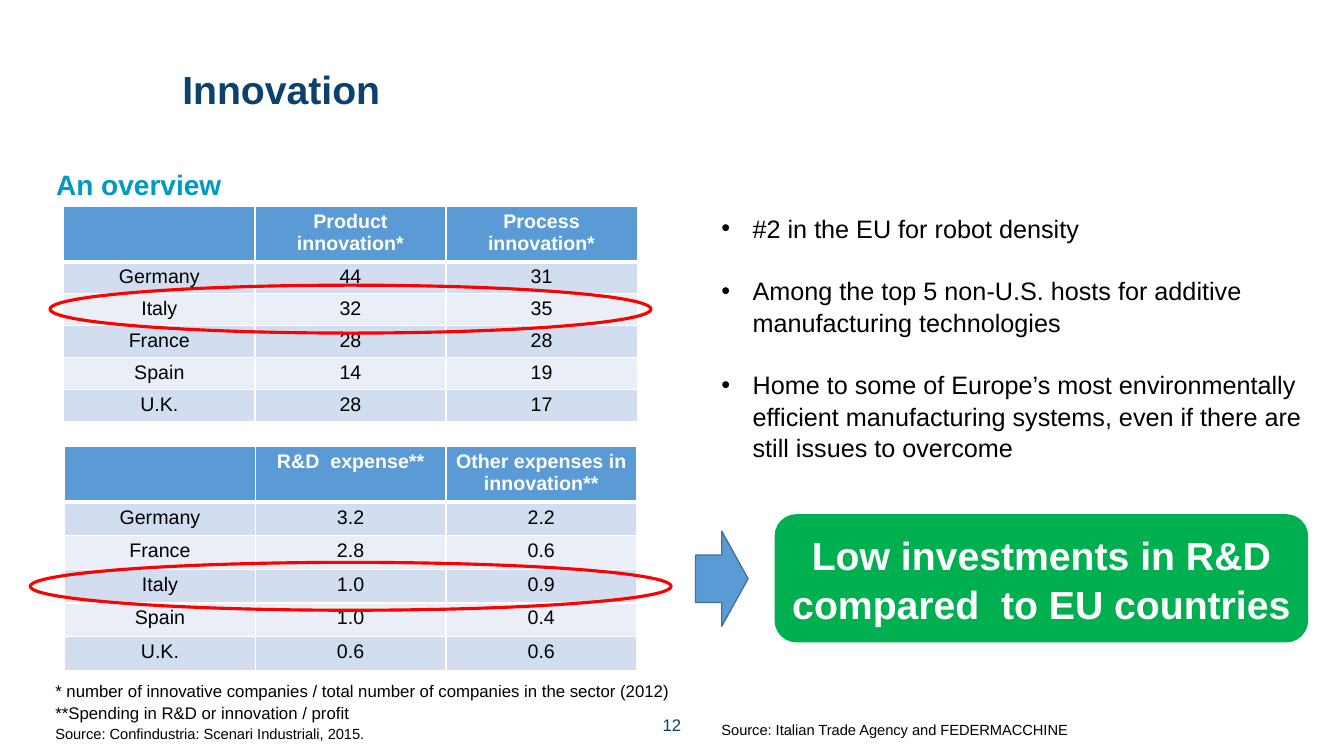
from collections import namedtuple

from lxml.etree import SubElement
from pptx import Presentation
from pptx.dml.color import RGBColor
from pptx.enum.shapes import MSO_SHAPE as Shape
from pptx.enum.text import MSO_ANCHOR as Anchor, PP_ALIGN as Align
from pptx.oxml.ns import qn
from pptx.util import Emu, Inches, Pt

COLORS = {
    "navy": "0C406D", "cyan": "0099C4", "black": "000000", "white": "FFFFFF",
    "blue": "5B9BD5", "outline": "43739E", "band": "D2DEEF", "pale": "EAEFF7",
    "red": "FF0000", "green": "00B050",
}
SLIDE_WIDTH, SLIDE_HEIGHT = Inches(13.33), Inches(7.5)
COLUMN, ROW = SLIDE_WIDTH / 32, SLIDE_HEIGHT / 18
Box = namedtuple("Box", "left top width height")

INNOVATION = [
    ("", "Product innovation*", "Process innovation*"),
    ("Germany", "44", "31"),
    ("Italy", "32", "35"),
    ("France", "28", "28"),
    ("Spain", "14", "19"),
    ("U.K.", "28", "17"),
]
EXPENSES = [
    ("", "R&D  expense**", "Other expenses in innovation**"),
    ("Germany", "3.2", "2.2"),
    ("France", "2.8", "0.6"),
    ("Italy", "1.0", "0.9"),
    ("Spain", "1.0", "0.4"),
    ("U.K.", "0.6", "0.6"),
]
FOOTNOTE = (
    "* number of innovative companies / total number of companies in the sector (2012)\v"
    "**Spending in R&D or innovation / profit"
)
BULLETS = [
    "#2 in the EU for robot density",
    "Among the top 5 non-U.S. hosts for additive manufacturing technologies",
    "Home to some of Europe’s most environmentally efficient manufacturing systems, "
    "even if there are still issues to overcome",
]


def rgb(name):
    """Return the named colour."""
    return RGBColor.from_string(COLORS[name])


def emu(box):
    """Turn a box in columns and rows into slide lengths."""
    return [Emu(round(length * unit)) for length, unit in zip(box, (COLUMN, ROW) * 2)]


def format_paragraph(paragraph, size, color, bold=False, **formats):
    """Set the font and the paragraph formats."""
    font_formats = {"name": "Arial", "size": Pt(size), "bold": bold}
    for name, value in font_formats.items():
        setattr(paragraph.font, name, value)
    paragraph.font.color.rgb = rgb(color)
    for name, value in formats.items():
        setattr(paragraph, name, value)


def write(shape, text, size, color, anchor=Anchor.TOP, **formats):
    """Fill a shape with one wrapped paragraph."""
    frame = shape.text_frame
    frame.word_wrap = True
    frame.vertical_anchor = anchor
    frame.text = text
    format_paragraph(frame.paragraphs[0], size, color, **formats)


def add_text(slide, box, *content, **formats):
    """Add a text box."""
    write(slide.shapes.add_textbox(*emu(box)), *content, **formats)


def add_preset(slide, kind, box, line, width, fill=None):
    """Add a flat preset shape."""
    shape = slide.shapes.add_shape(kind, *emu(box))
    shape.shadow.inherit = False
    if fill:
        shape.fill.solid()
        shape.fill.fore_color.rgb = rgb(fill)
    else:
        shape.fill.background()
    shape.line.color.rgb = rgb(line)
    shape.line.width = Pt(width)
    return shape


def add_heading(slide, box):
    """Place the title and the subtitle below it."""
    title = slide.shapes.title
    title.left, title.top, title.width, title.height = emu(box)
    write(title, "Innovation", 28, "navy", Anchor.MIDDLE, bold=True,
          alignment=Align.LEFT, line_spacing=0.9)
    subtitle = Box(box.left - 3, box.top + 2.28, box.width + 3, 2.09)
    add_text(slide, subtitle, "An overview", 20, "cyan", Anchor.MIDDLE, bold=True)


def format_cell(cell, text, is_header, fill):
    """Write a centred cell with white borders and a fill."""
    cell.text = text
    cell.margin_top = cell.margin_bottom = Inches(0.04)
    format_paragraph(cell.text_frame.paragraphs[0], 14, "white" if is_header else "black",
                     bold=is_header, alignment=Align.CENTER)
    properties = cell._tc.get_or_add_tcPr()
    for side in "LRTB":
        width = Pt(3 if is_header and side == "B" else 1)
        border = SubElement(properties, qn(f"a:ln{side}"), w=str(width))
        solid = SubElement(border, qn("a:solidFill"))
        SubElement(solid, qn("a:srgbClr"), val=COLORS["white"])
    cell.fill.solid()
    cell.fill.fore_color.rgb = rgb(fill)


def add_ranking(slide, box, rows, header_height, overhang):
    """Add a table of countries and ring the row of Italy."""
    row_height = (box.height - header_height) / (len(rows) - 1)
    table = slide.shapes.add_table(len(rows), len(rows[0]), *emu(box)).table
    for index, values in enumerate(rows):
        height = row_height if index else header_height
        table.rows[index].height = Emu(round(height * ROW))
        fill = ("pale", "band")[index % 2] if index else "blue"
        for column, value in enumerate(values):
            format_cell(table.cell(index, column), value, index == 0, fill)
    italy = [values[0] for values in rows].index("Italy")
    center = box.top + header_height + (italy - 0.5) * row_height
    ring_height = 1.14
    ring = Box(box.left - overhang, center - ring_height / 2,
               box.width + 2 * overhang, ring_height)
    add_preset(slide, Shape.OVAL, ring, "red", 2.25)


def add_bullets(slide, box):
    """List the strengths as bullets."""
    frame = slide.shapes.add_textbox(*emu(box)).text_frame
    frame.word_wrap = True
    for index, text in enumerate(BULLETS):
        paragraph = frame.paragraphs[0] if index == 0 else frame.add_paragraph()
        paragraph.text = text
        properties = paragraph._p.get_or_add_pPr()
        indent = Inches(0.31)
        properties.set("marL", str(indent))
        properties.set("indent", str(-indent))
        SubElement(properties, qn("a:buFont"), typeface="Arial")
        SubElement(properties, qn("a:buChar"), char="•")
        format_paragraph(paragraph, 18, "black", line_spacing=1.05,
                         space_before=Pt(21.7 if index else 0))


def add_conclusion(slide, box):
    """Add an arrow leading to the conclusion."""
    arrow = Box(box.left, box.top + 0.39, 1.25, 2.26)
    add_preset(slide, Shape.RIGHT_ARROW, arrow, "outline", 1, "blue")
    panel = Box(box.left + 1.9, box.top, box.width - 1.9, box.height)
    button = add_preset(slide, Shape.ROUNDED_RECTANGLE, panel, "green", 1, "green")
    button.text_frame.margin_left = button.text_frame.margin_right = Inches(0.05)
    write(button, "Low investments in R&D compared  to EU countries", 28, "white",
          Anchor.MIDDLE, bold=True, alignment=Align.CENTER, line_spacing=1.05)


def add_footer(slide, box):
    """Add the footnote, the sources and the page number."""
    add_text(slide, Box(box.left, box.top, 16, 1.2), FOOTNOTE, 12, "black",
             line_spacing=1.08)
    add_text(slide, Box(box.left, box.top + 1.09, 9, 0.67),
             "Source: Confindustria: Scenari Industriali, 2015.", 10.5, "black")
    add_text(slide, Box(box.left + 15.86, box.top + 0.99, 10, 0.67),
             "Source: Italian Trade Agency and FEDERMACCHINE", 10.5, "black")
    add_text(slide, Box(box.left + 14.26, box.top + 0.77, 1.32, 0.86), "12", 12, "navy",
             Anchor.MIDDLE, alignment=Align.CENTER)


def main():
    """Build the slide and save it."""
    presentation = Presentation()
    presentation.slide_width, presentation.slide_height = SLIDE_WIDTH, SLIDE_HEIGHT
    slide = presentation.slides.add_slide(presentation.slide_layouts[5])
    add_heading(slide, Box(4.1, 1.06, 26.83, 2.26))
    add_ranking(slide, Box(1.52, 4.92, 13.65, 5.1), INNOVATION, 1.3, 0.33)
    add_ranking(slide, Box(1.54, 10.63, 13.62, 5.33), EXPENSES, 1.33, 0.82)
    add_bullets(slide, Box(16.94, 4.92, 14.54, 6.05))
    add_conclusion(slide, Box(16.56, 12.26, 14.57, 3.02))
    add_footer(slide, Box(1.08, 16.05, 26, 1.8))
    presentation.save("out.pptx")


if __name__ == "__main__":
    main()
